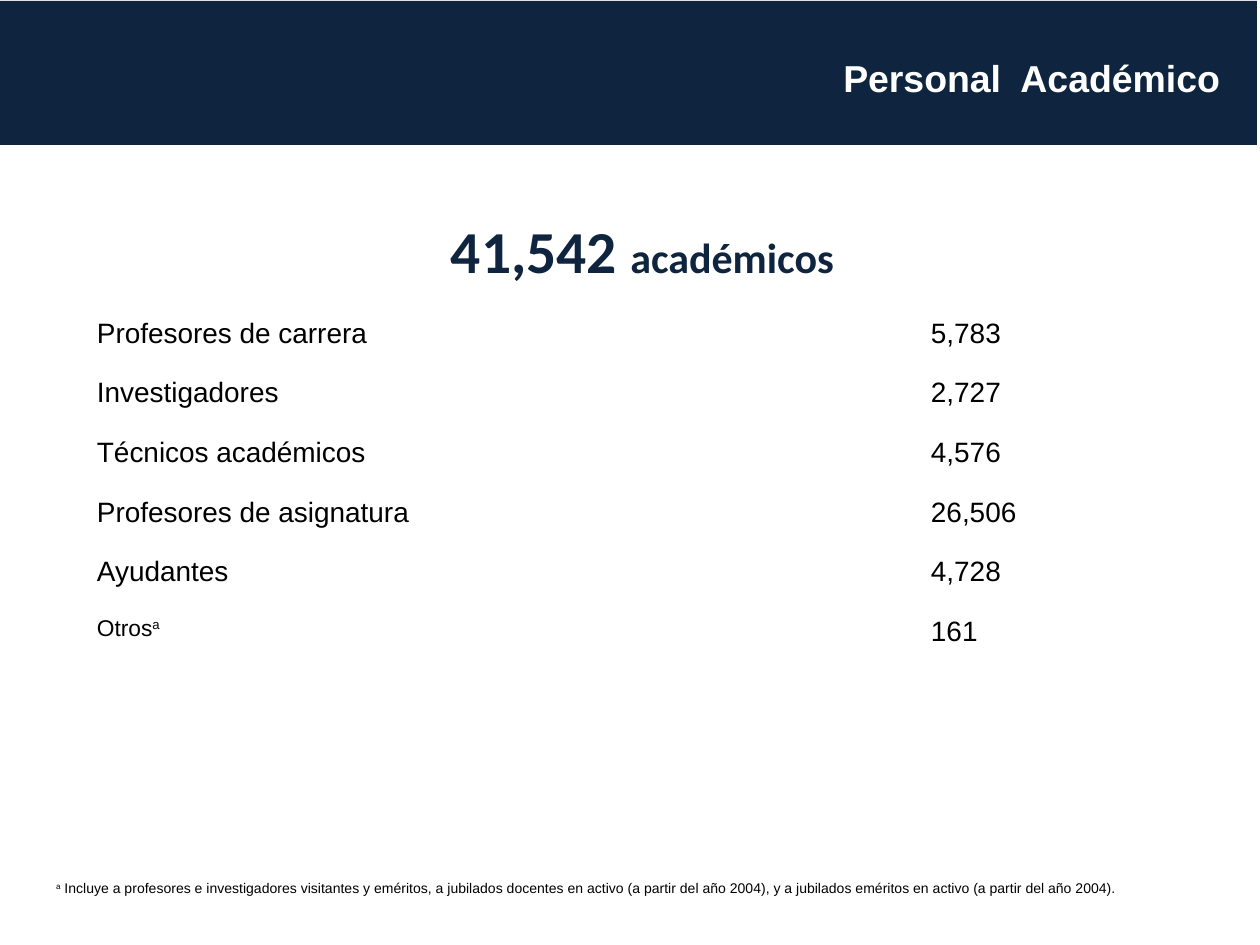
from pptx import Presentation
from pptx.dml.color import RGBColor
from pptx.enum.shapes import MSO_SHAPE
from pptx.enum.text import MSO_ANCHOR, PP_ALIGN
from pptx.util import Emu, Pt

NAVY, WHITE, BLACK = "0F243E", "FFFFFF", "000000"
CELL_MARGIN = 13
STAFF = [
    ("Profesores de carrera", "5,783"),
    ("Investigadores", "2,727"),
    ("Técnicos académicos", "4,576"),
    ("Profesores de asignatura", "26,506"),
    ("Ayudantes", "4,728"),
    ("Otros", "161"),
]
NOTE = (" Incluye a profesores e investigadores visitantes y eméritos, "
        "a jubilados docentes en activo (a partir del año 2004), "
        "y a jubilados eméritos en activo (a partir del año 2004).")


def px(length):
    return Emu(round(length * 914400 / 126))


def color(hex_string):
    return RGBColor.from_string(hex_string)


def set_font(font, size, name="Arial", hex_string=BLACK, bold=False):
    font.size, font.name, font.bold = Pt(size), name, bold
    font.color.rgb = color(hex_string)


def add_superscript(paragraph, text):
    run = paragraph.add_run()
    run.text = text
    run.font._element.set("baseline", "30000")


def add_text_box(slide, left, top, width, height, alignment):
    frame = slide.shapes.add_textbox(px(left), px(top), px(width), px(height)).text_frame
    frame.word_wrap = True
    frame.paragraphs[0].alignment = alignment
    return frame


def add_plain_table(slide, left, top, column_widths, row_height, row_count):
    """Add a table without fills or banding."""
    table = slide.shapes.add_table(row_count, len(column_widths), px(left), px(top),
                                   px(sum(column_widths)), px(row_height * row_count)).table
    table.first_row = table.horz_banding = False
    for column, width in zip(table.columns, column_widths):
        column.width = px(width)
    for cell in table.iter_cells():
        cell.fill.background()
        cell.margin_left = cell.margin_right = px(CELL_MARGIN)
        cell.margin_top = cell.margin_bottom = px(CELL_MARGIN)
    return table


def add_header(slide, left, top, width, height):
    band = slide.shapes.add_shape(MSO_SHAPE.RECTANGLE, px(left), px(top), px(width), px(height))
    band.shadow.inherit = False
    band.fill.solid()
    band.fill.fore_color.rgb = color(NAVY)
    band.line.fill.background()

    frame = add_text_box(slide, left + 329, top + 36, 921, 80, PP_ALIGN.RIGHT)
    frame.vertical_anchor = MSO_ANCHOR.MIDDLE
    frame.margin_right = px(24)
    paragraph = frame.paragraphs[0]
    paragraph.text = "Personal  Académico"
    set_font(paragraph.font, 21.4, hex_string=WHITE, bold=True)


def add_total(slide, left, top, width, height):
    paragraph = add_text_box(slide, left, top, width, height, PP_ALIGN.CENTER).paragraphs[0]
    for text, size in (("41,542 ", 34), ("académicos", 24)):
        run = paragraph.add_run()
        run.text = text
        set_font(run.font, size, "Calibri", NAVY, True)


def add_staff_table(slide, left, top, column_widths, row_height):
    table = add_plain_table(slide, left, top, column_widths, row_height, len(STAFF))
    for row, values in zip(table.rows, STAFF):
        for cell, value in zip(row.cells, values):
            paragraph = cell.text_frame.paragraphs[0]
            paragraph.text = value
            if value == "Otros":
                add_superscript(paragraph, "a")
            set_font(paragraph.font, 13 if value == "Otros" else 16)


def add_footnote(slide, left, top, width, height):
    table = add_plain_table(slide, left, top, [width], height, 1)
    paragraph = table.cell(0, 0).text_frame.paragraphs[0]
    add_superscript(paragraph, "a")
    paragraph.add_run().text = NOTE
    set_font(paragraph.font, 8)


def main():
    presentation = Presentation()
    presentation.slide_width, presentation.slide_height = px(1260), px(945)
    slide = presentation.slides.add_slide(presentation.slide_layouts[6])
    add_header(slide, -6, 1, 1263, 144)
    add_total(slide, 25, 208, 1235, 86)
    add_staff_table(slide, 84, 305, [834, 286], 58.75)
    add_footnote(slide, 43, 868, 1174, 54)
    presentation.save("out.pptx")


if __name__ == "__main__":
    main()
